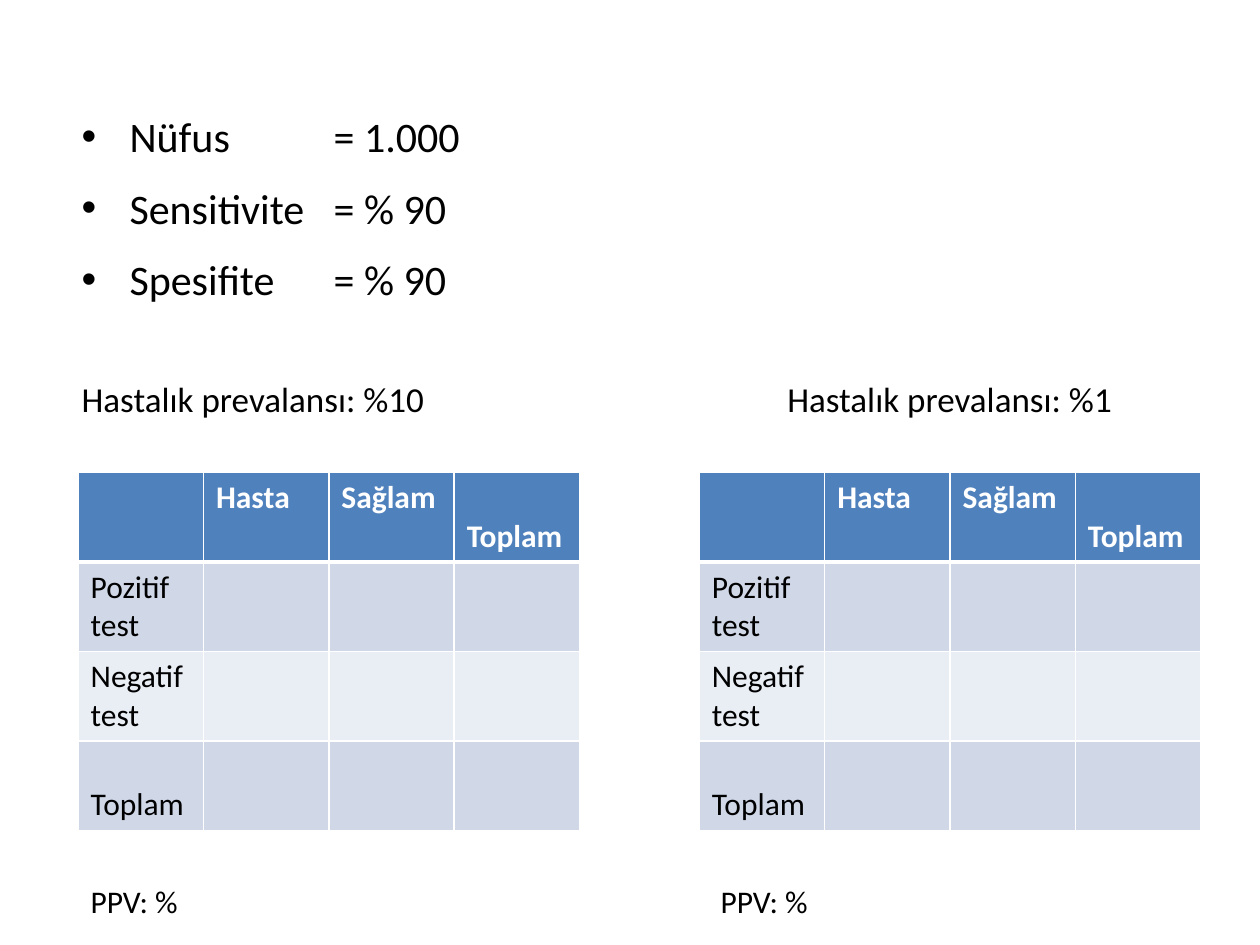
from lxml.etree import SubElement
from pptx import Presentation
from pptx.dml.color import RGBColor as Rgb
from pptx.enum.text import MSO_ANCHOR as Anchor
from pptx.oxml.ns import qn
from pptx.util import Inches, Pt

HUES = {"head": "4F81BD", "dark": "D0D8E8", "light": "E9EDF4",
        "white": "FFFFFF", "black": "000000"}


def style(para, size, hue="black", bold=False):
    para.font.size = Pt(size)
    for run in para.runs:
        font = run.font
        font.name, font.size, font.bold = "Calibri", Pt(size), bold
        font.color.rgb = Rgb.from_string(HUES[hue])


def add_tab(para, pos):
    stops = SubElement(para._p.get_or_add_pPr(), qn("a:tabLst"))
    SubElement(stops, qn("a:tab"), pos=str(Inches(pos)), algn="l")


deck = Presentation()
deck.slide_width, deck.slide_height = Inches(10), Inches(7.5)
slide = deck.slides.add_slide(deck.slide_layouts[6])

body = slide.shapes.add_textbox(Inches(0.55), Inches(0.83), Inches(9), Inches(2.7))
frame = body.text_frame
frame.word_wrap = True
facts = ["Nüfus\t= 1.000", "Sensitivite\t= % 90", "Spesifite\t= % 90"]
rates = "Hastalık prevalansı: %10\tHastalık prevalansı: %1"
frame.text = "\n".join(facts + [rates])
*items, last = frame.paragraphs
for para in items:
    style(para, 24)
    para.space_before = Pt(12)
    props = para._p.get_or_add_pPr()
    props.set("marL", str(Inches(0.38)))
    props.set("indent", str(Inches(-0.38)))
    SubElement(props, qn("a:buFont"), typeface="Arial")
    SubElement(props, qn("a:buChar"), char="•")
    add_tab(para, 2)
style(last, 20)
last.space_before = Pt(42)
add_tab(last, 5.6)

rows = [["", "Hasta", "Sağlam", "Toplam"],
        ["Pozitif test", "", "", ""],
        ["Negatif test", "", "", ""],
        ["Toplam", "", "", ""]]
fills = ["head", "dark", "light", "dark"]
for left in (0.62, 5.55):
    grid = slide.shapes.add_table(4, 4, Inches(left), Inches(3.75),
                                  Inches(3.98), Inches(2.84)).table
    for r, row in enumerate(rows):
        for c, text in enumerate(row):
            cell = grid.cell(r, c)
            cell.text = text
            head = r == 0
            style(cell.text_frame.paragraphs[0], 18, "white" if head else "black", head)
            if text == "Toplam":
                cell.vertical_anchor = Anchor.BOTTOM
            props = cell._tc.get_or_add_tcPr()
            for side in "LRTB":
                thick = (r, side) in ((0, "B"), (1, "T"))
                line = SubElement(props, qn("a:ln" + side), w=str(Pt(3 if thick else 1)))
                paint = SubElement(line, qn("a:solidFill"))
                SubElement(paint, qn("a:srgbClr"), val=HUES["white"])
            cell.fill.solid()
            cell.fill.fore_color.rgb = Rgb.from_string(HUES[fills[r]])

foot = slide.shapes.add_textbox(Inches(0.62), Inches(6.95), Inches(8.91), Inches(0.4))
foot.text_frame.word_wrap = True
foot.text_frame.text = "PPV: %\tPPV: %"
para = foot.text_frame.paragraphs[0]
style(para, 18)
add_tab(para, 5)

deck.save("out.pptx")
